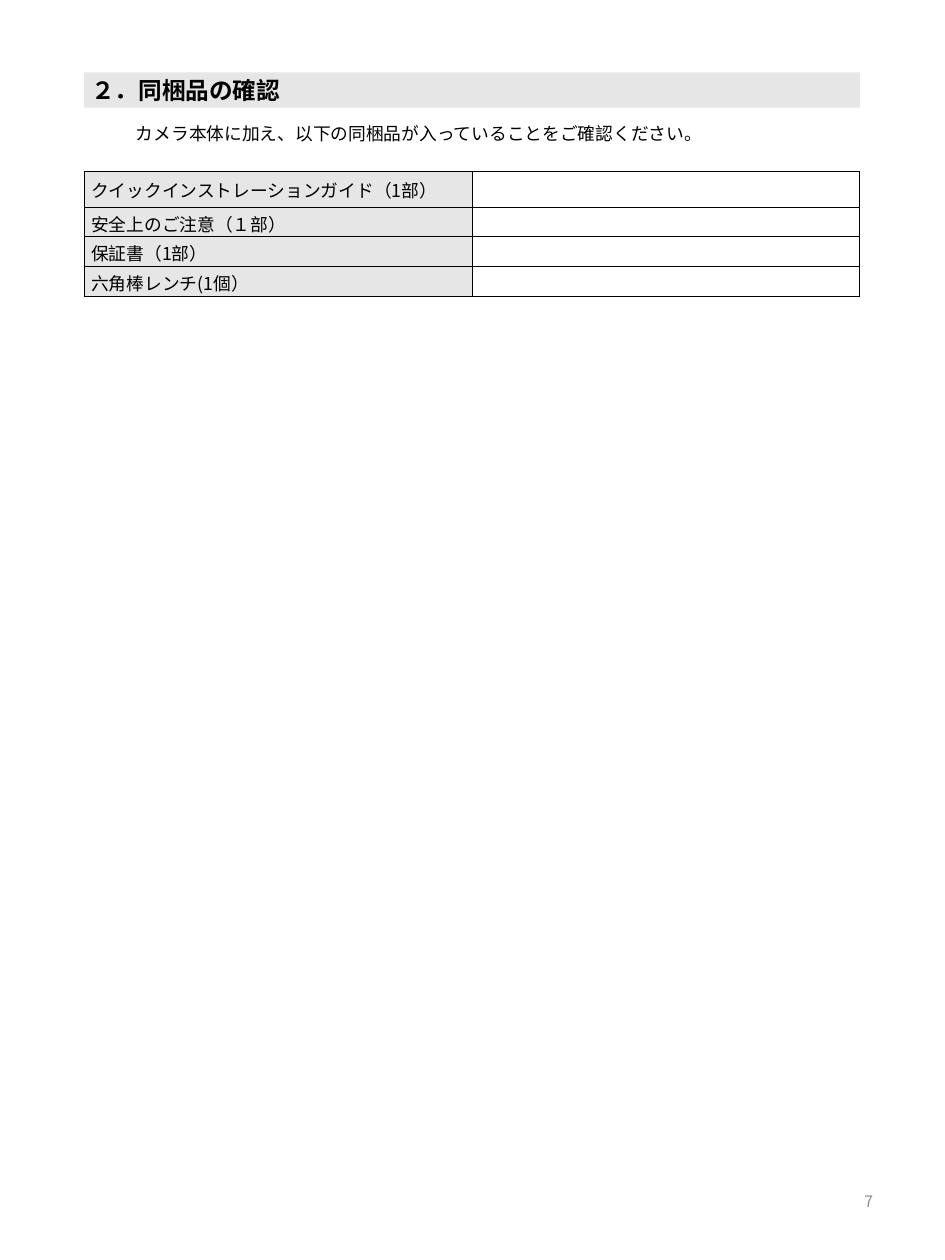
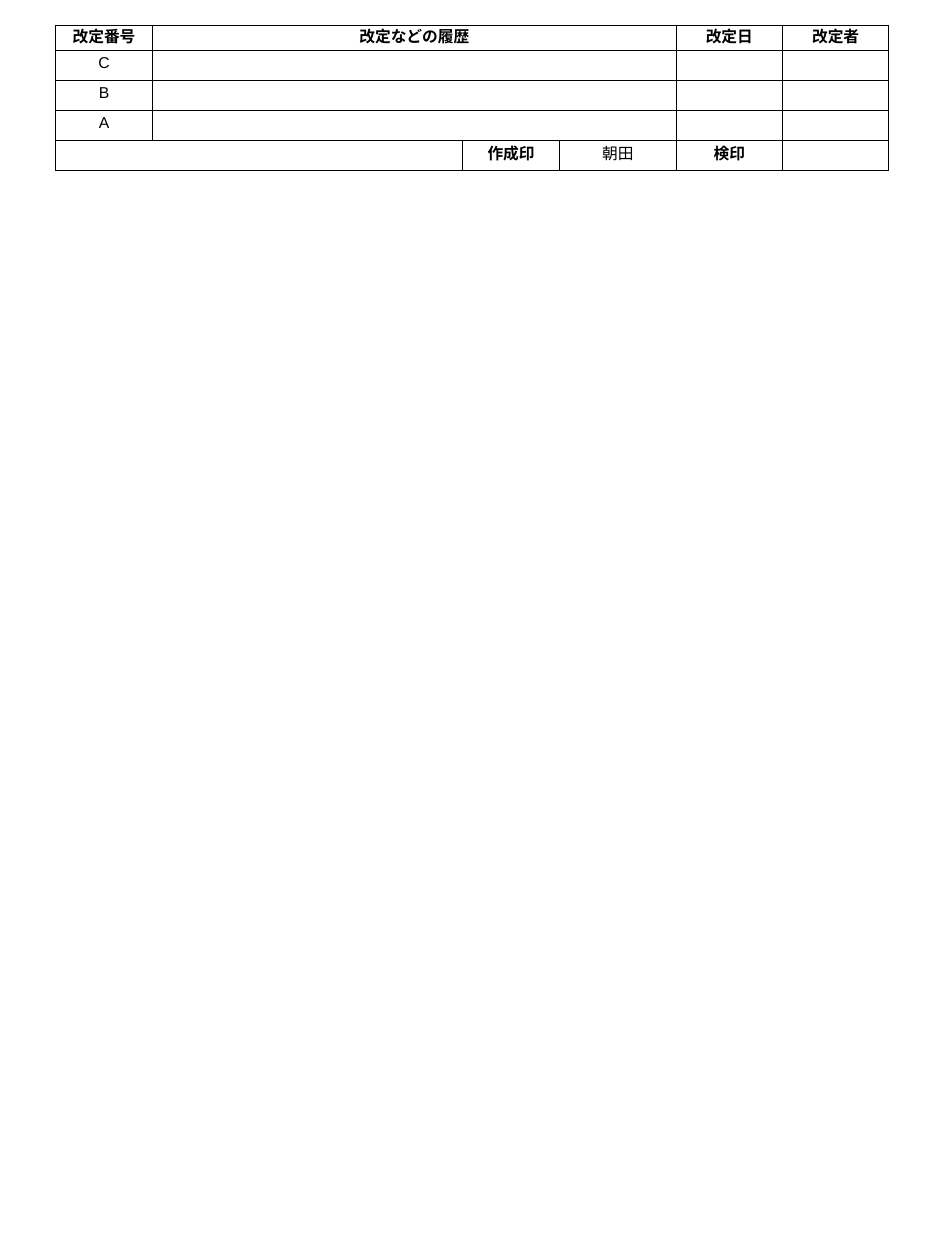
from lxml import etree
from pptx import Presentation
from pptx.dml.color import RGBColor
from pptx.enum import shapes, text
from pptx.oxml import ns
from pptx.util import Pt

COLORS = {"ink": "000000", "band": "E7E6E6", "muted": "8C8C8C"}
SANS, LATIN, SERIF = "Noto Sans CJK JP", "Arial", "TeX Gyre Schola"
LEFT, RIGHT, CENTER = text.PP_ALIGN.LEFT, text.PP_ALIGN.RIGHT, text.PP_ALIGN.CENTER
TOP, MIDDLE = text.MSO_ANCHOR.TOP, text.MSO_ANCHOR.MIDDLE


def rgb(color):
    return RGBColor.from_string(COLORS[color])


class Manual:
    def __init__(self, width, height):
        self.deck = Presentation()
        self.deck.slide_width, self.deck.slide_height = Pt(width), Pt(height)
        self.slide = None

    def new_page(self):
        self.slide = self.deck.slides.add_slide(self.deck.slide_layouts[6])

    def set_text(self, frame, words, size, font, color="ink", bold=False, align=LEFT):
        paragraph = frame.paragraphs[0]
        paragraph.text = words
        paragraph.alignment = align
        style = paragraph.font
        style.size, style.name, style.bold = Pt(size), font, bold
        style.color.rgb = rgb(color)
        defaults = paragraph._p.find(ns.qn("a:pPr")).find(ns.qn("a:defRPr"))
        etree.SubElement(defaults, ns.qn("a:ea"), typeface=SANS)
        return paragraph

    def heading(self, words, left, top, width, height):
        band = self.slide.shapes.add_shape(
            shapes.MSO_SHAPE.RECTANGLE, Pt(left), Pt(top), Pt(width), Pt(height))
        band.shadow.inherit = False
        band.fill.solid()
        band.fill.fore_color.rgb = rgb("band")
        band.line.fill.background()
        band.text_frame.vertical_anchor = TOP
        self.set_text(band.text_frame, words, 24, LATIN, bold=True)

    def label(self, words, left, top, width, height, size, font,
              color="ink", align=LEFT, anchor=TOP):
        frame = self.slide.shapes.add_textbox(
            Pt(left), Pt(top), Pt(width), Pt(height)).text_frame
        frame.word_wrap = True
        frame.vertical_anchor = anchor
        self.set_text(frame, words, size, font, color, align=align)

    def page_number(self, number):
        self.label(number, 678, 1186.5, 216, 68.5, 16, SANS, "muted", RIGHT, MIDDLE)

    def grid(self, left, top, widths, heights):
        """Add a ruled table with unfilled cells."""
        table = self.slide.shapes.add_table(
            len(heights), len(widths), Pt(left), Pt(top),
            Pt(sum(widths)), Pt(sum(heights))).table
        table.first_row = table.horz_banding = False
        for column, width in zip(table.columns, widths):
            column.width = Pt(width)
        for row, height in zip(table.rows, heights):
            row.height = Pt(height)
        for cell in table.iter_cells():
            self.rule(cell)
            cell.fill.background()
        return table

    def rule(self, cell):
        """Draw a thin line on all four sides of a cell."""
        properties = cell._tc.get_or_add_tcPr()
        for side in ("a:lnL", "a:lnR", "a:lnT", "a:lnB"):
            line = etree.SubElement(properties, ns.qn(side), w=str(Pt(1)))
            fill = etree.SubElement(line, ns.qn("a:solidFill"))
            etree.SubElement(fill, ns.qn("a:srgbClr"), val=COLORS["ink"])

    def item_cell(self, cell, words, anchor):
        cell.fill.solid()
        cell.fill.fore_color.rgb = rgb("band")
        cell.vertical_anchor = anchor
        self.set_text(cell.text_frame, words, 18, SANS)

    def record_cell(self, cell, words, bold):
        cell.vertical_anchor = MIDDLE
        cell.margin_left = cell.margin_right = Pt(11.5)
        cell.margin_top = cell.margin_bottom = Pt(4)
        paragraph = self.set_text(cell.text_frame, words, 16, LATIN, bold=bold, align=CENTER)
        paragraph.line_spacing = 0.7


def contents_page(manual):
    left, width = 85.5, 788
    items = ["クイックインストレーションガイド（1部）", "安全上のご注意（１部）",
             "保証書（1部）", "六角棒レンチ(1個）"]
    manual.new_page()
    manual.page_number("7")
    manual.heading("２．同梱品の確認", left, 73.5, width, 36)
    manual.label("カメラ本体に加え、以下の同梱品が入っていることをご確認ください。",
                 131, 121, 688, 29, 18, SERIF)
    table = manual.grid(left, 174.5, [width / 2] * 2, [36, 30, 30, 31])
    for row, item in enumerate(items):
        manual.item_cell(table.cell(row, 0), item, TOP if row else MIDDLE)


def revision_page(manual):
    entries = {
        (0, 0): ("改定番号", True), (0, 1): ("改定などの履歴", True),
        (0, 4): ("改定日", True), (0, 5): ("改定者", True),
        (1, 0): ("C", False), (2, 0): ("B", False), (3, 0): ("A", False),
        (4, 2): ("作成印", True), (4, 3): ("朝田", False), (4, 4): ("検印", True),
    }
    manual.new_page()
    table = manual.grid(56.5, 25.5, [98.5, 315, 98.5, 118.5, 108, 108],
                        [25.5] + [30.5] * 4)
    for row in range(4):
        table.cell(row, 1).merge(table.cell(row, 3))
    table.cell(4, 0).merge(table.cell(4, 1))
    for (row, column), (words, bold) in entries.items():
        manual.record_cell(table.cell(row, column), words, bold)


def main():
    manual = Manual(960, 1280)
    contents_page(manual)
    revision_page(manual)
    manual.deck.save("out.pptx")


if __name__ == "__main__":
    main()
